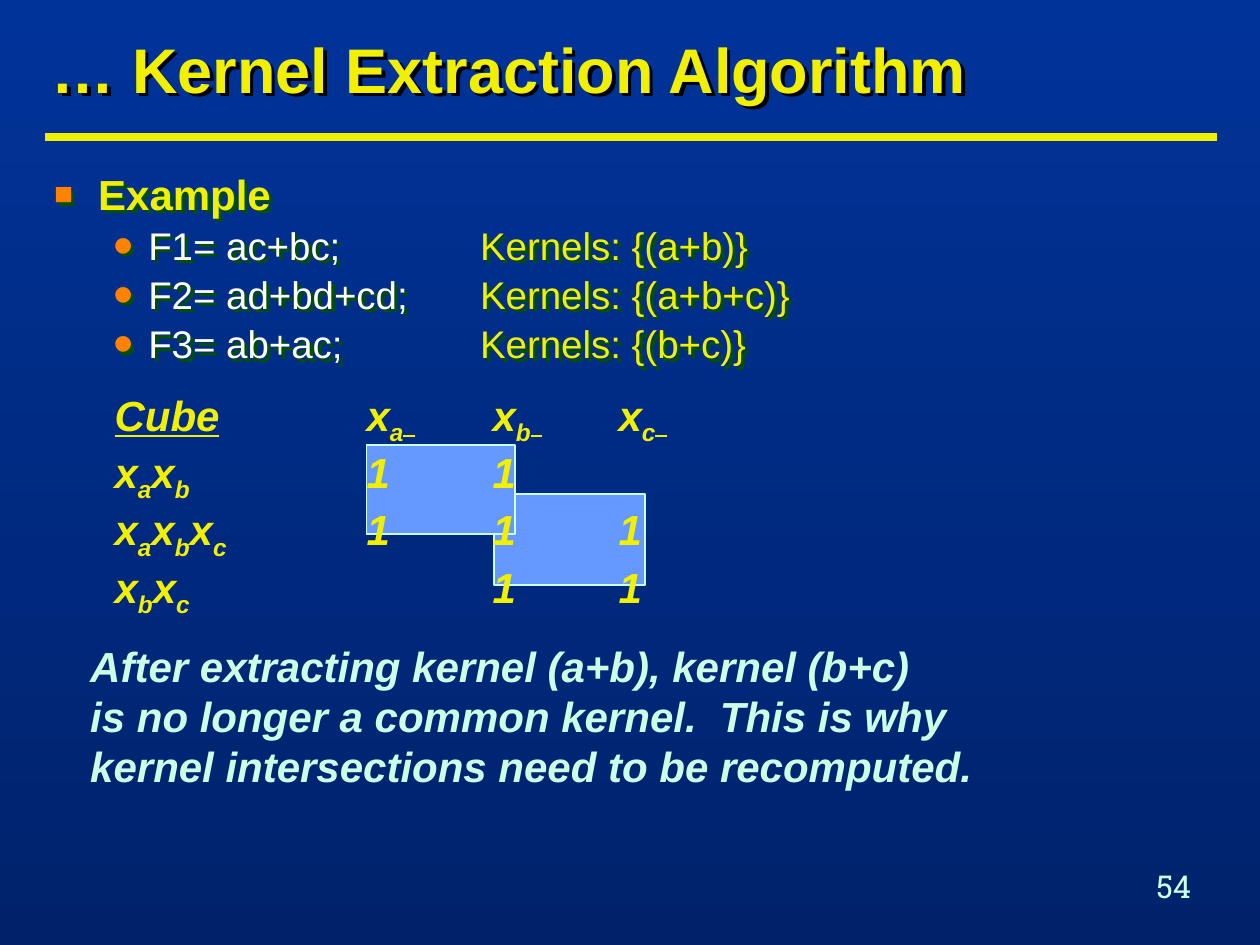
from pptx import Presentation
from pptx.dml.color import RGBColor
from pptx.enum.shapes import MSO_CONNECTOR, MSO_SHAPE
from pptx.enum.text import MSO_ANCHOR, MSO_AUTO_SIZE, PP_ALIGN
from pptx.oxml.ns import qn
from pptx.util import Cm, Pt
from lxml import etree

STRAIGHT = MSO_CONNECTOR.STRAIGHT
RECTANGLE = MSO_SHAPE.RECTANGLE
MIDDLE = MSO_ANCHOR.MIDDLE
LEFT = PP_ALIGN.LEFT
FIT_SHAPE = MSO_AUTO_SIZE.SHAPE_TO_FIT_TEXT

COLORS = {
    "top": "003399",
    "bottom": "00226B",
    "yellow": "F0F000",
    "mint": "CDFFE6",
    "white": "FFFFFF",
    "orange": "FF8200",
    "block": "6699FF",
    "title_shadow": "000000",
    "body_shadow": "005000",
}
FONT = "Arial"
KERNEL_TABS = (4.78, 6.68, 8.59)
CUBE_TABS = [2.54 * column for column in range(1, 6)]
KERNELS = [
    ("F1= ac+bc;\t \t", "Kernels: {(a+b)}"),
    ("F2= ad+bd+cd;\t", "Kernels: {(a+b+c)}"),
    ("F3= ab+ac;\t\t", "Kernels: {(b+c)}"),
]
CUBES = [("ab", "\t\t1\t1\t"), ("abc", "\t\t1\t1\t1"), ("bc", "\t\t\t1\t1")]
CONCLUSION = [
    "After extracting kernel (a+b), kernel (b+c)",
    "is no longer a common kernel.  This is why",
    "kernel intersections need to be recomputed.",
]


def rgb(name):
    return RGBColor.from_string(COLORS[name])


def add_element(parent, tag, **attributes):
    return etree.SubElement(
        parent, qn(tag), {key: str(value) for key, value in attributes.items()}
    )


def paint_background(slide):
    fill = slide.background.fill
    fill.gradient()
    fill.gradient_angle = 270
    for stop, name in zip(fill.gradient_stops, ("top", "bottom")):
        stop.color.rgb = rgb(name)


def add_run(paragraph, text, size, color, bold=False, italic=False,
            underline=False, subscript=False, font=FONT):
    run = paragraph.add_run()
    run.text = text
    run.font.name = font
    run.font.size = Pt(size)
    run.font.color.rgb = rgb(color)
    run.font.bold = bold
    run.font.italic = italic
    run.font.underline = underline
    if subscript:
        run.font._element.set("baseline", "-25000")


def add_text_shadow(shape, color):
    effects = add_element(shape._element.spPr, "a:effectLst")
    shadow = add_element(effects, "a:outerShdw", dist=35900, dir=2700000, algn="ctr")
    add_element(shadow, "a:srgbClr", val=COLORS[color])


def add_bullet(paragraph, character, percent, margin, hanging):
    properties = paragraph._p.get_or_add_pPr()
    properties.set("marL", str(Cm(margin)))
    properties.set("indent", str(-Cm(hanging)))
    color = add_element(properties, "a:buClr")
    add_element(color, "a:srgbClr", val=COLORS["orange"])
    add_element(properties, "a:buSzPct", val=percent * 1000)
    add_element(properties, "a:buFont", typeface=FONT)
    add_element(properties, "a:buChar", char=character)


def add_tabs(paragraph, positions):
    tab_list = add_element(paragraph._p.get_or_add_pPr(), "a:tabLst")
    for position in positions:
        add_element(tab_list, "a:tab", pos=Cm(position), algn="l")


def add_text_box(slide, left, top, width, height, wrap=False):
    box = slide.shapes.add_textbox(Cm(left), Cm(top), Cm(width), Cm(height))
    box.text_frame.word_wrap = wrap
    if not wrap:
        box.text_frame.auto_size = FIT_SHAPE
    return box


def add_paragraph(frame, spacing=1.0):
    first = frame.paragraphs[0]
    paragraph = frame.add_paragraph() if first.runs else first
    paragraph.line_spacing = spacing
    return paragraph


def add_rule(slide):
    rule = slide.shapes.add_connector(STRAIGHT, Cm(0.91), Cm(2.77), Cm(24.54), Cm(2.77))
    rule.line.color.rgb = rgb("yellow")
    rule.line.width = Pt(4.5)
    add_element(rule._element.spPr, "a:effectLst")


def add_block(slide, left, top, width, height):
    block = slide.shapes.add_shape(RECTANGLE, Cm(left), Cm(top), Cm(width), Cm(height))
    block.shadow.inherit = False
    block.fill.solid()
    block.fill.fore_color.rgb = rgb("block")
    block.line.color.rgb = rgb("mint")
    block.line.width = Pt(1)


def format_title(slide):
    title = slide.shapes.title
    title.left, title.top, title.width, title.height = Cm(0.79), Cm(0.58), Cm(23.85), Cm(1.78)
    title.text_frame.vertical_anchor = MIDDLE
    paragraph = add_paragraph(title.text_frame, 0.9)
    paragraph.alignment = LEFT
    add_run(paragraph, "… Kernel Extraction Algorithm", 36, "yellow", bold=True)
    add_text_shadow(title, "title_shadow")


def add_example(slide):
    box = add_text_box(slide, 0.84, 3.38, 23.67, 14.88, wrap=True)
    heading = add_paragraph(box.text_frame, 0.9)
    add_bullet(heading, "■", 75, 0.89, 0.89)
    add_run(heading, "Example", 24, "yellow", bold=True)
    for function, kernels in KERNELS:
        paragraph = add_paragraph(box.text_frame, 0.9)
        paragraph.level = 1
        paragraph.space_before = Pt(4.4)
        add_bullet(paragraph, "•", 150, 1.9, 0.71)
        add_tabs(paragraph, KERNEL_TABS)
        add_run(paragraph, function, 22, "white")
        add_run(paragraph, kernels, 22, "yellow")
    add_text_shadow(box, "body_shadow")


def add_cube_run(paragraph, text, **style):
    add_run(paragraph, text, 24, "yellow", bold=True, italic=True, **style)


def add_variable(paragraph, letter):
    add_cube_run(paragraph, "x")
    add_cube_run(paragraph, letter, subscript=True)


def add_cube_row(frame):
    paragraph = add_paragraph(frame)
    add_tabs(paragraph, CUBE_TABS)
    return paragraph


def add_cube_matrix(slide):
    frame = add_text_box(slide, 2.06, 7.72, 13.21, 4.32).text_frame
    header = add_cube_row(frame)
    add_cube_run(header, "Cube\t\t", underline=True)
    for letter in "abc":
        add_variable(header, letter)
        add_cube_run(header, " \t", underline=True)
    for letters, entries in CUBES:
        paragraph = add_cube_row(frame)
        for letter in letters:
            add_variable(paragraph, letter)
        add_cube_run(paragraph, entries)


def add_conclusion(slide):
    frame = add_text_box(slide, 1.57, 12.78, 18.29, 3.3).text_frame
    for line in CONCLUSION:
        add_run(add_paragraph(frame), line, 24, "mint", bold=True, italic=True)


def add_slide_number(slide):
    frame = add_text_box(slide, 23.06, 17.35, 2.34, 1.02).text_frame
    add_run(add_paragraph(frame), "54", 18, "mint", font="Roboto Slab")


def main():
    presentation = Presentation()
    presentation.slide_width, presentation.slide_height = Cm(25.4), Cm(19.05)
    slide = presentation.slides.add_slide(presentation.slide_layouts[5])
    paint_background(slide)
    add_rule(slide)
    add_slide_number(slide)
    add_block(slide, 9.96, 9.96, 3.05, 1.83)
    add_block(slide, 7.39, 8.97, 3, 1.8)
    format_title(slide)
    add_example(slide)
    add_cube_matrix(slide)
    add_conclusion(slide)
    presentation.save("out.pptx")


if __name__ == "__main__":
    main()
